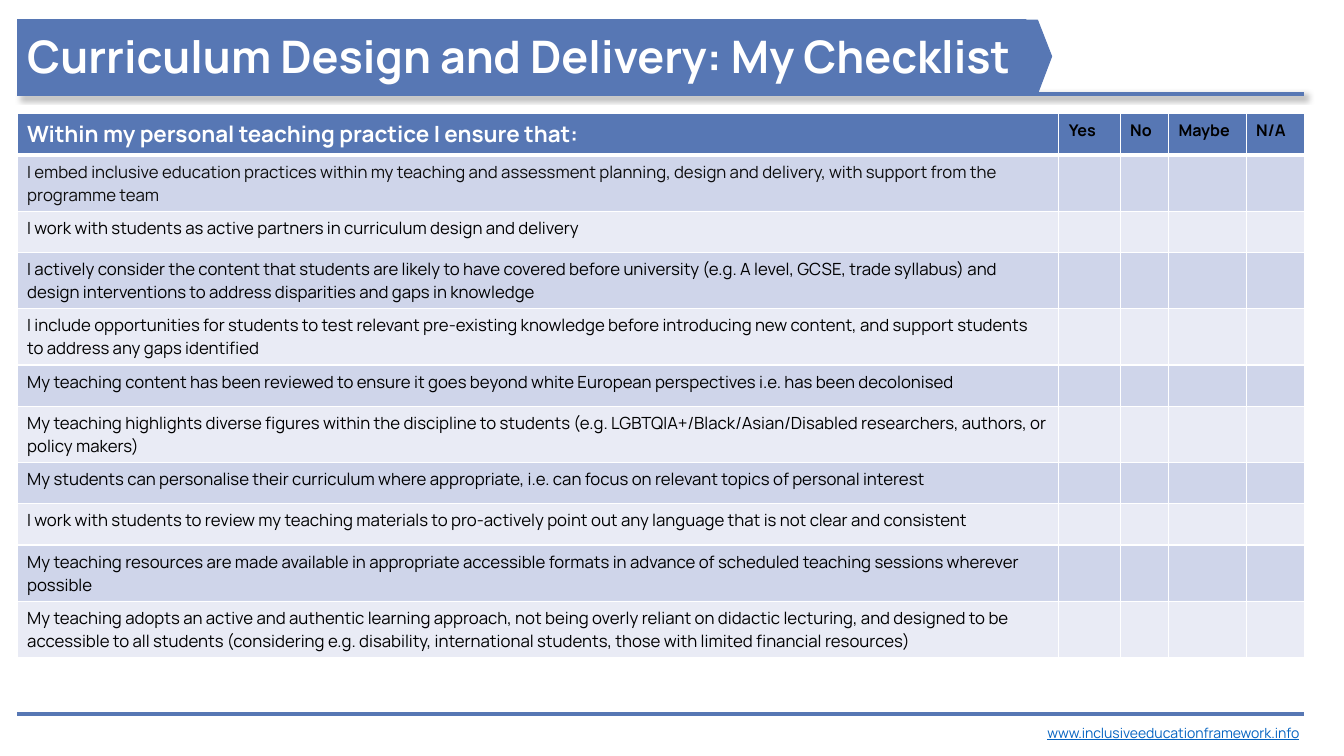
import dataclasses

import lxml.etree
import pptx
import pptx.dml.color
import pptx.enum.dml
import pptx.enum.shapes
import pptx.enum.text
import pptx.oxml
import pptx.oxml.ns
import pptx.util

RGB = pptx.dml.color.RGBColor
BLUE = RGB(0x57, 0x77, 0xB4)
WHITE = RGB(0xFF, 0xFF, 0xFF)
BLACK = RGB(0x00, 0x00, 0x00)
DARK = RGB(0x0D, 0x0D, 0x0D)
LINK = RGB(0x05, 0x63, 0xC1)
BANDS = (RGB(0xCF, 0xD5, 0xEA), RGB(0xE9, 0xEB, 0xF5))
FONT = "Manrope"
SCALE = 9144  # EMU per px, 100 px to the inch
LEFT, WIDE = 17, 1276
ROW = 41


@dataclasses.dataclass(frozen=True)
class Style:
    size: float
    color: RGB
    bold: bool = False
    under: bool = False


@dataclasses.dataclass(frozen=True)
class Column:
    head: str
    width: int
    style: Style


@dataclasses.dataclass(frozen=True)
class Rule:
    top: int
    shadow: bool


TITLE = Style(32, WHITE, bold=True)
ANSWER = Style(11.5, BLACK, bold=True)
FIRST = Style(12, DARK)
BODY = Style(12, BLACK)
SITE = Style(10, LINK, under=True)

COLUMNS = (
    Column("Within my personal teaching practice I ensure that:", 1033, Style(16, WHITE, bold=True)),
    Column("Yes", 61, ANSWER),
    Column("No", 48, ANSWER),
    Column("Maybe", 77, ANSWER),
    Column("N/A", 58, ANSWER),
)
ITEMS = (
    "I embed inclusive education practices within my teaching and assessment planning, design and "
    "delivery, with support from the programme team",
    "I work with students as active partners in curriculum design and delivery",
    "I actively consider the content that students are likely to have covered before university "
    "(e.g. A level, GCSE, trade syllabus) and design interventions to address disparities and gaps in knowledge",
    "I include opportunities for students to test relevant pre-existing knowledge before introducing "
    "new content, and support students to address any gaps identified",
    "My teaching content has been reviewed to ensure it goes beyond white European perspectives "
    "i.e. has been decolonised",
    "My teaching highlights diverse figures within the discipline to students "
    "(e.g. LGBTQIA+/Black/Asian/Disabled researchers, authors, or policy makers)",
    "My students can personalise their curriculum where appropriate, i.e. can focus on relevant "
    "topics of personal interest",
    "I work with students to review my teaching materials to pro-actively point out any language "
    "that is not clear and consistent",
    "My teaching resources are made available in appropriate accessible formats in advance of "
    "scheduled teaching sessions wherever possible",
    "My teaching adopts an active and authentic learning approach, not being overly reliant on "
    "didactic lecturing, and designed to be accessible to all students (considering e.g. disability, "
    "international students, those with limited financial resources)",
)
RULES = (Rule(93, True), Rule(708, False))
FLAG = ((1029, 20), (854, 20), (854, 93), (1029, 93), (1043, 56))


def px(count: int) -> pptx.util.Emu:
    return pptx.util.Emu(count * SCALE)


def write(frame, text: str, style: Style) -> None:
    para = frame.paragraphs[0]
    para.alignment = pptx.enum.text.PP_ALIGN.LEFT
    run = para.add_run()
    run.text = text
    font = run.font
    font.name, font.size = FONT, pptx.util.Pt(style.size)
    font.bold, font.underline = style.bold, style.under
    font.color.rgb = style.color


def paint(shape, color: RGB) -> None:
    shape.fill.solid()
    shape.fill.fore_color.rgb = color


def edge(cell, low: int) -> None:
    """Draw white borders, the bottom one low points wide."""
    props = cell._tc.get_or_add_tcPr()
    for place, (side, width) in enumerate((("L", 1), ("R", 1), ("T", 1), ("B", low))):
        props.insert(place, pptx.oxml.parse_xml(
            f'<a:ln{side} {pptx.oxml.ns.nsdecls("a")} w="{pptx.util.Pt(width)}">'
            f'<a:solidFill><a:srgbClr val="{WHITE}"/></a:solidFill></a:ln{side}>'))


def add_title(slide) -> None:
    title = slide.shapes.title
    title.left, title.top, title.width, title.height = px(LEFT), px(19), px(1001), px(73)
    paint(title, BLUE)
    frame = title.text_frame
    frame.auto_size = pptx.enum.text.MSO_AUTO_SIZE.NONE
    frame.vertical_anchor = pptx.enum.text.MSO_ANCHOR.MIDDLE
    write(frame, "Curriculum Design and Delivery: My Checklist", TITLE)
    # Arrow end, placed behind the title
    form = slide.shapes.build_freeform(*FLAG[0], scale=SCALE)
    form.add_line_segments(FLAG[1:], close=True)
    flag = form.convert_to_shape()
    flag.shadow.inherit = False
    paint(flag, BLUE)
    flag.line.color.rgb = BLUE
    flag.line.width = pptx.util.Pt(0.75)
    title.element.addprevious(flag.element)


def add_rule(slide, rule: Rule) -> None:
    line = slide.shapes.add_connector(
        pptx.enum.shapes.MSO_CONNECTOR.STRAIGHT, px(LEFT), px(rule.top), px(LEFT + WIDE), px(rule.top))
    line.line.color.rgb = BLUE
    line.line.width = pptx.util.Pt(3)
    name = pptx.oxml.ns.qn
    effects = lxml.etree.SubElement(line.element.spPr, name("a:effectLst"))
    if rule.shadow:
        shade = lxml.etree.SubElement(
            effects, name("a:outerShdw"), blurRad=str(pptx.util.Pt(4)), dist=str(pptx.util.Pt(3)),
            dir=str(45 * 60000), algn="tl", rotWithShape="0")
        color = lxml.etree.SubElement(shade, name("a:srgbClr"), val=str(BLACK))
        lxml.etree.SubElement(color, name("a:alpha"), val="40000")


def add_list(slide) -> None:
    count = len(ITEMS) + 1
    table = slide.shapes.add_table(
        count, len(COLUMNS), px(LEFT), px(113), px(WIDE), px(ROW * count)).table
    for row in table.rows:
        row.height = px(ROW)
    for spot, column in enumerate(COLUMNS):
        table.columns[spot].width = px(column.width)
        write(table.cell(0, spot).text_frame, column.head, column.style)
        for line in range(count):
            cell = table.cell(line, spot)
            paint(cell, BANDS[(line - 1) % 2] if line else BLUE)
            edge(cell, 1 if line else 3)
    for line, item in enumerate(ITEMS, 1):
        write(table.cell(line, 0).text_frame, item, FIRST if line == 1 else BODY)


def add_site(slide) -> None:
    box = slide.shapes.add_textbox(px(1029), px(714), px(280), px(27))
    box.text_frame.word_wrap = True
    write(box.text_frame, "www.inclusiveeducationframework.info", SITE)


def main() -> None:
    deck = pptx.Presentation()
    deck.slide_width, deck.slide_height = px(1333), px(750)
    slide = deck.slides.add_slide(deck.slide_layouts.get_by_name("Title Only"))
    # Rules go behind the title band
    for rule in RULES:
        add_rule(slide, rule)
    slide.shapes[-1].element.addnext(slide.shapes.title.element)
    add_title(slide)
    # Checklist and footer
    add_list(slide)
    add_site(slide)
    deck.save("out.pptx")


if __name__ == "__main__":
    main()
